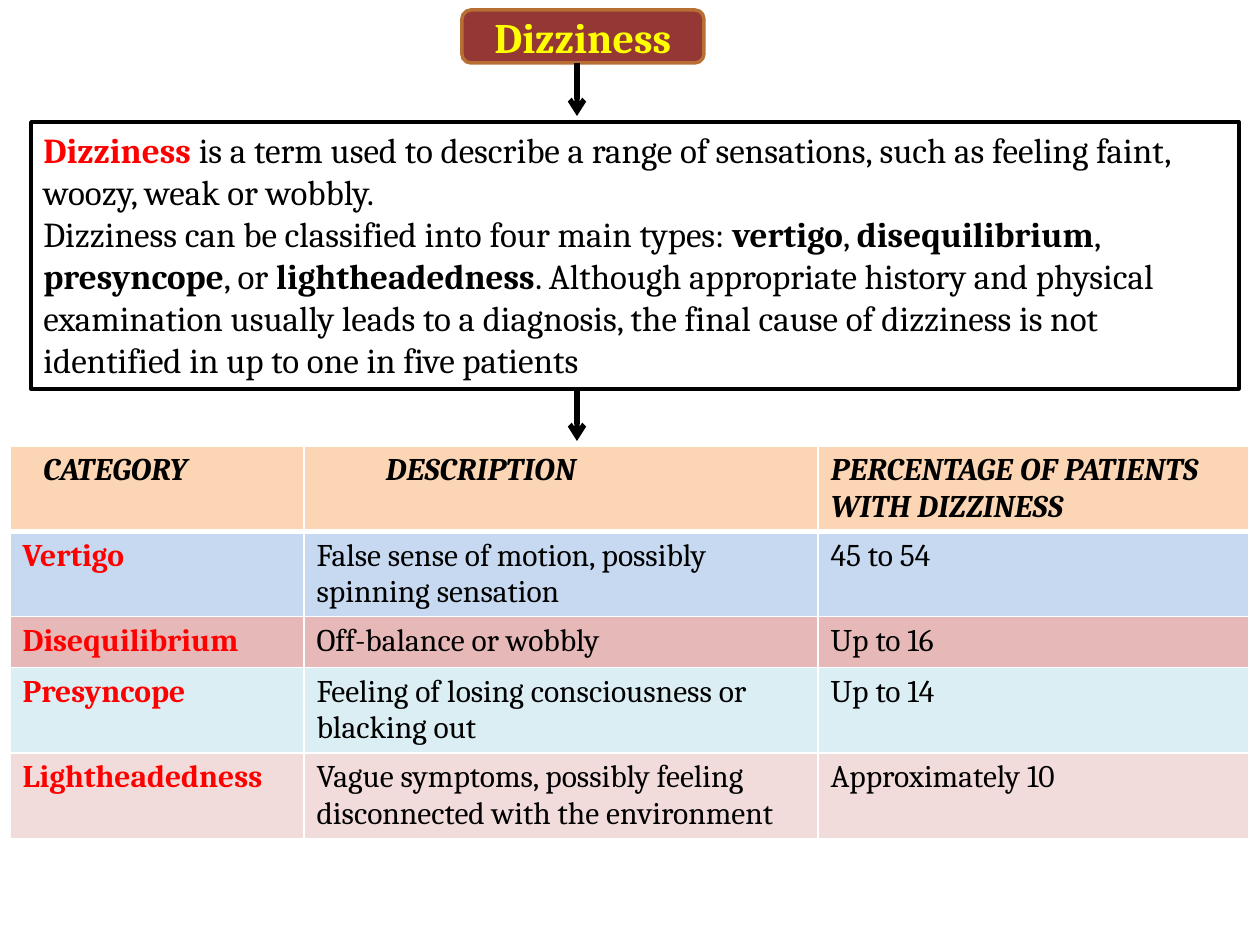
from lxml.etree import SubElement
from pptx import Presentation
from pptx.dml.color import RGBColor
from pptx.enum.shapes import MSO_CONNECTOR, MSO_SHAPE
from pptx.enum.text import MSO_ANCHOR, PP_ALIGN
from pptx.oxml.ns import qn
from pptx.util import Pt

PX = 914400 / 126
FONT = "Cambria"
BLACK, WHITE, RED, YELLOW = "000000", "FFFFFF", "FF0000", "FFFF00"
HEADER_FILL = "FCD5B5"

DEFINITION = [
    [("Dizziness ", True, RED),
     ("is a term used to describe a range of sensations, such as feeling "
      "faint, woozy, weak or wobbly.", False, BLACK)],
    [("Dizziness can be classified into four main types: ", False, BLACK),
     ("vertigo", True, BLACK), (", ", False, BLACK),
     ("disequilibrium", True, BLACK), (", ", False, BLACK),
     ("presyncope", True, BLACK), (", or ", False, BLACK),
     ("lightheadedness", True, BLACK),
     (". Although appropriate history and physical examination usually leads "
      "to a diagnosis, the final cause of dizziness is not identified in up "
      "to one in five patients", False, BLACK)],
]
COLUMNS = [  # heading, width, left margin of the heading
    ("CATEGORY", 294, 33),
    ("DESCRIPTION", 514, 82),
    ("PERCENTAGE OF PATIENTS WITH DIZZINESS", 431, 13),
]
CATEGORIES = [
    ("C6D9F1", "Vertigo",
     "False sense of motion, possibly spinning sensation", "45 to 54"),
    ("E6B9B8", "Disequilibrium", "Off-balance or wobbly", "Up to 16"),
    ("DBEEF4", "Presyncope",
     "Feeling of losing consciousness or blacking out", "Up to 14"),
    ("F2DCDB", "Lightheadedness",
     "Vague symptoms, possibly feeling disconnected with the environment",
     "Approximately 10"),
]


def px(length):
    return round(length * PX)


def color(value):
    return RGBColor.from_string(value)


class Painter:
    """Holds the text style and the slide being filled."""

    def __init__(self, slide, font):
        self.slide = slide
        self.font = font

    def span(self, para, text, size, ink, bold=False, italic=False):
        span = para.add_run()
        span.text = text
        span.font.name = self.font
        span.font.size = Pt(size)
        span.font.bold = bold
        span.font.italic = italic
        span.font.color.rgb = color(ink)

    def box(self, kind, area, fill, line, paragraphs, size,
            align=PP_ALIGN.LEFT, anchor=MSO_ANCHOR.TOP):
        box = self.slide.shapes.add_shape(kind, *map(px, area))
        box.shadow.inherit = False
        box.fill.solid()
        box.fill.fore_color.rgb = color(fill)
        box.line.color.rgb = color(line)
        box.line.width = Pt(2)
        frame = box.text_frame
        frame.word_wrap = True
        frame.vertical_anchor = anchor
        for index, spans in enumerate(paragraphs):
            para = frame.add_paragraph() if index else frame.paragraphs[0]
            para.alignment = align
            for text, bold, ink in spans:
                self.span(para, text, size, ink, bold)

    def down_arrow(self, x, top, bottom):
        arrow = self.slide.shapes.add_connector(
            MSO_CONNECTOR.STRAIGHT, px(x), px(top), px(x), px(bottom))
        arrow.line.color.rgb = color(BLACK)
        arrow.line.width = Pt(3)
        SubElement(arrow.line._get_or_add_ln(), qn("a:tailEnd"), type="arrow")
        SubElement(arrow._element.spPr, qn("a:effectLst"))

    def cell(self, cell, text, fill, ink, bold, italic, edges):
        """Fill a cell; edges gives the left, right, top and bottom widths."""
        properties = cell._tc.get_or_add_tcPr()
        for side, width in zip("LRTB", edges):
            edge = SubElement(properties, qn(f"a:ln{side}"), w=str(Pt(width)))
            paint = SubElement(edge, qn("a:solidFill"))
            SubElement(paint, qn("a:srgbClr"), val=WHITE)
        cell.fill.solid()
        cell.fill.fore_color.rgb = color(fill)
        self.span(cell.text_frame.paragraphs[0], text, 18, ink, bold, italic)

    def table(self, left, top, row_height, columns, rows):
        width = sum(column[1] for column in columns)
        count = len(rows) + 1
        table = self.slide.shapes.add_table(
            count, len(columns), px(left), px(top),
            px(width), px(row_height * count)).table
        table.first_row = table.horz_banding = False
        for row in table.rows:
            row.height = px(row_height)
        for index, (heading, column_width, margin) in enumerate(columns):
            table.columns[index].width = px(column_width)
            header = table.cell(0, index)
            header.margin_left = px(margin)
            self.cell(header, heading, HEADER_FILL, BLACK, True, True,
                      (1, 1, 1, 3))
        for number, (fill, *texts) in enumerate(rows, 1):
            edges = (1, 1, 3 if number == 1 else 1, 1)
            for index, text in enumerate(texts):
                first = index == 0
                self.cell(table.cell(number, index), text, fill,
                          RED if first else BLACK, first, False, edges)


def main():
    deck = Presentation()
    deck.slide_width, deck.slide_height = px(1260), px(945)
    painter = Painter(deck.slides.add_slide(deck.slide_layouts[6]), FONT)
    painter.box(MSO_SHAPE.RECTANGLE, (31, 122, 1208, 267), WHITE, BLACK,
                DEFINITION, 20)
    painter.box(MSO_SHAPE.ROUNDED_RECTANGLE, (462, 10, 242, 53), "953735",
                "B76F34", [[("Dizziness", True, YELLOW)]], 24,
                PP_ALIGN.CENTER, MSO_ANCHOR.MIDDLE)
    painter.table(10, 446, 51, COLUMNS, CATEGORIES)
    for top in (63, 388):
        painter.down_arrow(577, top, top + 53)
    deck.save("out.pptx")


if __name__ == "__main__":
    main()
